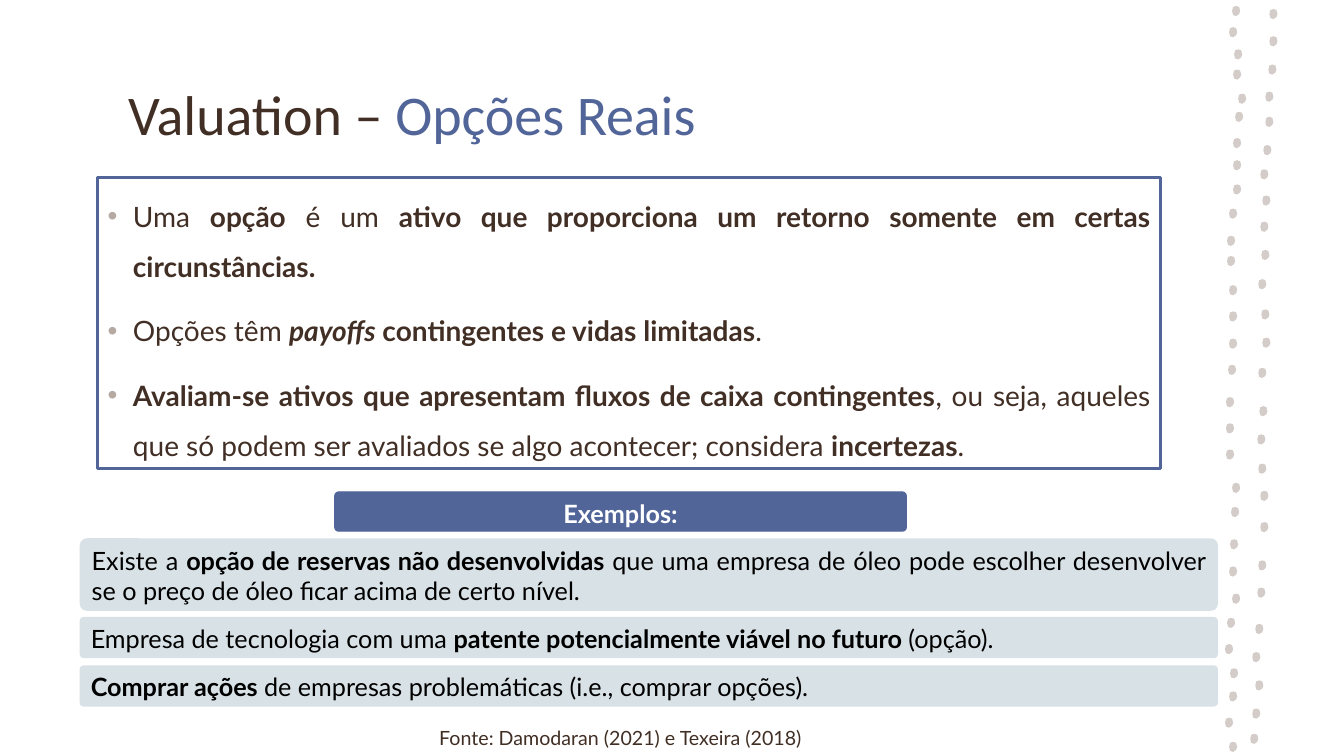
from lxml import etree
from pptx import Presentation
from pptx import util as u
from pptx.dml.color import RGBColor
from pptx.enum import shapes, text
from pptx.oxml import ns

PX = 9144
BROWN = RGBColor(0x41, 0x2E, 0x24)
BLUE = RGBColor(0x52, 0x65, 0x99)
PALE = RGBColor(0xD8, 0xE1, 0xE6)
SAND = RGBColor(0xD4, 0xCC, 0xC8)
BLACK = RGBColor(0, 0, 0)
WHITE = RGBColor(255, 255, 255)
LEFT, MID, BOTH = text.PP_ALIGN.LEFT, text.PP_ALIGN.CENTER, text.PP_ALIGN.JUSTIFY
TOP = text.MSO_ANCHOR.TOP


def write(shape, paras, size=18, font="Lato", color=BLACK, align=BOTH,
          lead=None, above=0, bullet=None, anchor=TOP):
    frame = shape.text_frame
    frame.word_wrap = True
    frame.vertical_anchor = anchor
    for i, runs in enumerate(paras):
        para = frame.add_paragraph() if i else frame.paragraphs[0]
        para.alignment = align
        para.space_before = u.Pt(above)
        if lead:
            para.line_spacing = lead
        if bullet:
            props = para._p.get_or_add_pPr()
            props.set("marL", str(25 * PX))
            props.set("indent", str(-25 * PX))
            tint = etree.SubElement(props, ns.qn("a:buClr"))
            etree.SubElement(tint, ns.qn("a:srgbClr")).set("val", bullet)
            etree.SubElement(props, ns.qn("a:buFont")).set("typeface", "Arial")
            etree.SubElement(props, ns.qn("a:buChar")).set("char", "•")
        for words, style, *tint in runs:
            run = para.add_run()
            run.text = words
            run.font.size = u.Pt(size)
            run.font.name = font
            run.font.bold = "b" in style
            run.font.italic = "i" in style
            run.font.color.rgb = tint[0] if tint else color


def block(kind, box, fill=None, line=None, width=0.75):
    shape = slide.shapes.add_shape(kind, *[n * PX for n in box])
    shape.shadow.inherit = False
    if fill is None:
        shape.fill.background()
    else:
        shape.fill.solid()
        shape.fill.fore_color.rgb = fill
    if line is None:
        shape.line.fill.background()
    else:
        shape.line.color.rgb = line
        shape.line.width = u.Pt(width)
    if kind == ROUND:
        shape.adjustments[0] = 0.1
    return shape


RECT = shapes.MSO_SHAPE.RECTANGLE
ROUND = shapes.MSO_SHAPE.ROUNDED_RECTANGLE

deck = Presentation()
deck.slide_width, deck.slide_height = 1333 * PX, 750 * PX
slide = deck.slides.add_slide(deck.slide_layouts[5])

dots = [
    (1263, 14), (1263, 41), (1262, 69), (1259, 96), (1259, 121), (1257, 149),
    (1254, 173), (1256, 199), (1254, 225), (1255, 253), (1252, 282), (1255, 312),
    (1256, 340), (1252, 370), (1253, 408), (1251, 436), (1252, 465), (1254, 492),
    (1254, 523), (1252, 561), (1251, 588), (1249, 624), (1246, 652), (1249, 680),
    (1246, 708), (1244, 733),
    (1226, 11), (1223, 32), (1228, 54), (1227, 74), (1232, 98), (1229, 116),
    (1227, 142), (1227, 164), (1227, 188), (1223, 212), (1221, 239), (1221, 259),
    (1223, 288), (1223, 314), (1223, 341), (1222, 367), (1220, 399), (1220, 425),
    (1220, 451), (1226, 484), (1225, 508), (1224, 540), (1223, 567), (1226, 594),
    (1221, 618), (1219, 644), (1224, 668), (1223, 691), (1219, 717), (1223, 741),
]
rim = [(0, -5), (3, -4), (4, 0), (3, 3), (0, 5), (-3, 4), (-4, 0), (-3, -4)]
for x, y in dots:
    ring = [(x + dx, y + dy) for dx, dy in rim]
    path = slide.shapes.build_freeform(*ring[0], scale=PX)
    path.add_line_segments(ring[1:], close=True)
    dot = path.convert_to_shape()
    dot.shadow.inherit = False
    dot.fill.solid()
    dot.fill.fore_color.rgb = SAND
    dot.line.fill.background()

title = slide.shapes.title
title.left, title.top, title.width, title.height = [n * PX for n in (117, 40, 1054, 145)]
write(title, [[("Valuation – ", ""), ("Opções Reais", "", BLUE)]], size=40,
      font="Calibri", color=BROWN, align=LEFT, anchor=text.MSO_ANCHOR.MIDDLE)

source = slide.shapes.add_textbox(*[n * PX for n in (283, 708, 665, 41)])
write(source, [[("Fonte: Damodaran (2021) e Texeira (2018)", "")]], size=14,
      color=BROWN, align=MID, lead=1.3, above=10)

points = [
    [("Uma ", ""), ("opção", "b"), (" é um ", ""),
     ("ativo que proporciona um retorno somente em certas circunstâncias.", "b")],
    [("Opções têm ", ""), ("payoffs", "bi"),
     (" contingentes e vidas limitadas", "b"), (".", "")],
    [("Avaliam-se ativos que apresentam fluxos de caixa contingentes", "b"),
     (", ou seja, aqueles que só podem ser avaliados se algo acontecer; considera ", ""),
     ("incertezas", "b"), (".", "")],
]
body = block(RECT, (97, 176, 1054, 289), line=BLUE, width=2.25)
write(body, points, size=20, color=BROWN, lead=1.5, above=10, bullet="B5A9A2")

head = block(ROUND, (332, 488, 567, 39), fill=BLUE, line=BLUE)
write(head, [[("Exemplos:", "b")]], color=WHITE, align=MID)

cases = [
    (534, 72, [("Existe a ", ""), ("opção de reservas não desenvolvidas ", "b"),
               ("que uma empresa de óleo pode escolher desenvolver se o preço "
                "de óleo ficar acima de certo nível.", "")]),
    (612, 41, [("Empresa de tecnologia com uma ", ""),
               ("patente potencialmente viável no futuro ", "b"), ("(opção).", "")]),
    (660, 41, [("Comprar ações ", "b"),
               ("de empresas problemáticas (i.e., comprar opções).", "")]),
]
for top, high, runs in cases:
    write(block(ROUND, (79, top, 1129, high), fill=PALE), [runs])

deck.save("out.pptx")
